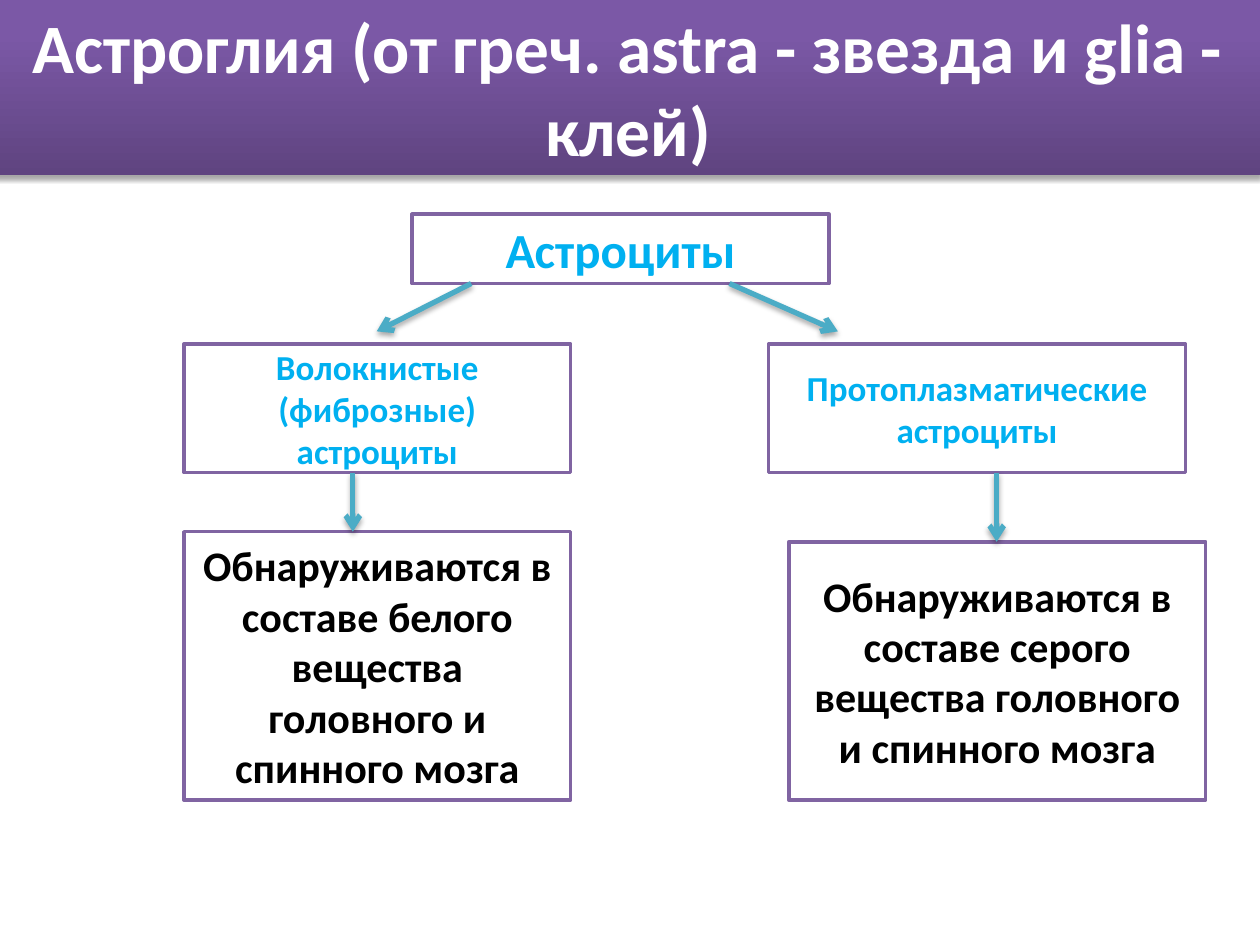
from dataclasses import dataclass

from lxml import etree
from pptx import Presentation
from pptx.dml.color import RGBColor
from pptx.enum import shapes, text
from pptx.oxml import parse_xml
from pptx.oxml.ns import nsdecls, qn
from pptx.util import Inches, Pt


@dataclass(frozen=True)
class Theme:
    font: str = "Calibri"
    white: str = "FFFFFF"
    black: str = "000000"
    blue: str = "00B0F0"
    edge: str = "8064A2"
    arrow: str = "4BACC6"
    grad: tuple = ((0, "5F4480"), (80, "7B58A6"), (100, "7C57A8"))
    title: float = 39.6
    root: float = 28
    kind: float = 20
    note: float = 24


THEME = Theme()


def rgb(code):
    return RGBColor.from_string(code)


def shade(shape):
    """Give the shape a soft shadow straight below it."""
    shape._element.spPr.append(parse_xml(
        f'<a:effectLst {nsdecls("a")}>'
        '<a:outerShdw blurRad="40000" dist="23000" dir="5400000" rotWithShape="0">'
        f'<a:srgbClr val="{THEME.black}"><a:alpha val="35000"/></a:srgbClr>'
        '</a:outerShdw></a:effectLst>'))


def write(shape, words, size, color):
    frame = shape.text_frame
    frame.word_wrap = True
    frame.auto_size = text.MSO_AUTO_SIZE.NONE
    frame.vertical_anchor = text.MSO_ANCHOR.MIDDLE
    para = frame.paragraphs[0]
    para.alignment = text.PP_ALIGN.CENTER
    run = para.add_run()
    run.text = words
    font = run.font
    font.name, font.size, font.bold = THEME.font, Pt(size), True
    font.color.rgb = rgb(color)


def add_title(slide, box, words):
    title = slide.shapes.title
    title.left, title.top, title.width, title.height = map(Inches, box)
    stops = "".join(
        f'<a:gs pos="{pos * 1000}"><a:srgbClr val="{code}"/></a:gs>'
        for pos, code in THEME.grad)
    title._element.spPr.append(parse_xml(
        f'<a:gradFill {nsdecls("a")} rotWithShape="1"><a:gsLst>{stops}</a:gsLst>'
        '<a:lin ang="16200000" scaled="0"/></a:gradFill>'))
    shade(title)
    write(title, words, THEME.title, THEME.white)


def add_box(slide, box, words, size, color):
    shape = slide.shapes.add_shape(
        shapes.MSO_SHAPE.RECTANGLE, *map(Inches, box))
    shape.shadow.inherit = False
    shape.fill.solid()
    shape.fill.fore_color.rgb = rgb(THEME.white)
    shape.line.color.rgb = rgb(THEME.edge)
    shape.line.width = Pt(2)
    write(shape, words, size, color)


def add_arrow(slide, start, end):
    link = slide.shapes.add_connector(
        shapes.MSO_CONNECTOR.STRAIGHT, *map(Inches, start + end))
    link.line.color.rgb = rgb(THEME.arrow)
    link.line.width = Pt(3)
    etree.SubElement(link.line._get_or_add_ln(), qn("a:tailEnd"), type="arrow")
    shade(link)


def add_branch(slide, box, kind, note, shift, drop, stem):
    """Place a type box over its note; the note moves right by shift,
    starts at drop and ends with the branch; stem is the arrow's x."""
    left, top, width, height = box
    head = 1.02
    add_box(slide, (left, top, width, head), kind, THEME.kind, THEME.blue)
    add_box(slide, (left + shift, drop, width, top + height - drop),
            note, THEME.note, THEME.black)
    add_arrow(slide, (stem, top + head), (stem, drop))


def main():
    deck = Presentation()
    deck.slide_width, deck.slide_height = Inches(10), Inches(7.5)
    slide = deck.slides.add_slide(deck.slide_layouts[5])
    add_title(slide, (-0.03, 0, 10.03, 1.39),
              "Астроглия (от греч. astra - звезда и glia - клей)")
    add_box(slide, (3.27, 1.7, 3.31, 0.55), "Астроциты",
            THEME.root, THEME.blue)
    add_arrow(slide, (3.74, 2.25), (2.99, 2.63))
    add_arrow(slide, (5.79, 2.25), (6.65, 2.63))
    note = "Обнаруживаются в составе {} вещества головного и спинного мозга"
    add_branch(slide, (1.46, 2.73, 3.07, 3.62),
               "Волокнистые (фиброзные) астроциты",
               note.format("белого"), 0, 4.22, 2.8)
    add_branch(slide, (6.1, 2.73, 3.31, 3.62),
               "Протоплазматические астроциты",
               note.format("серого"), 0.16, 4.3, 7.91)
    deck.save("out.pptx")


if __name__ == "__main__":
    main()
